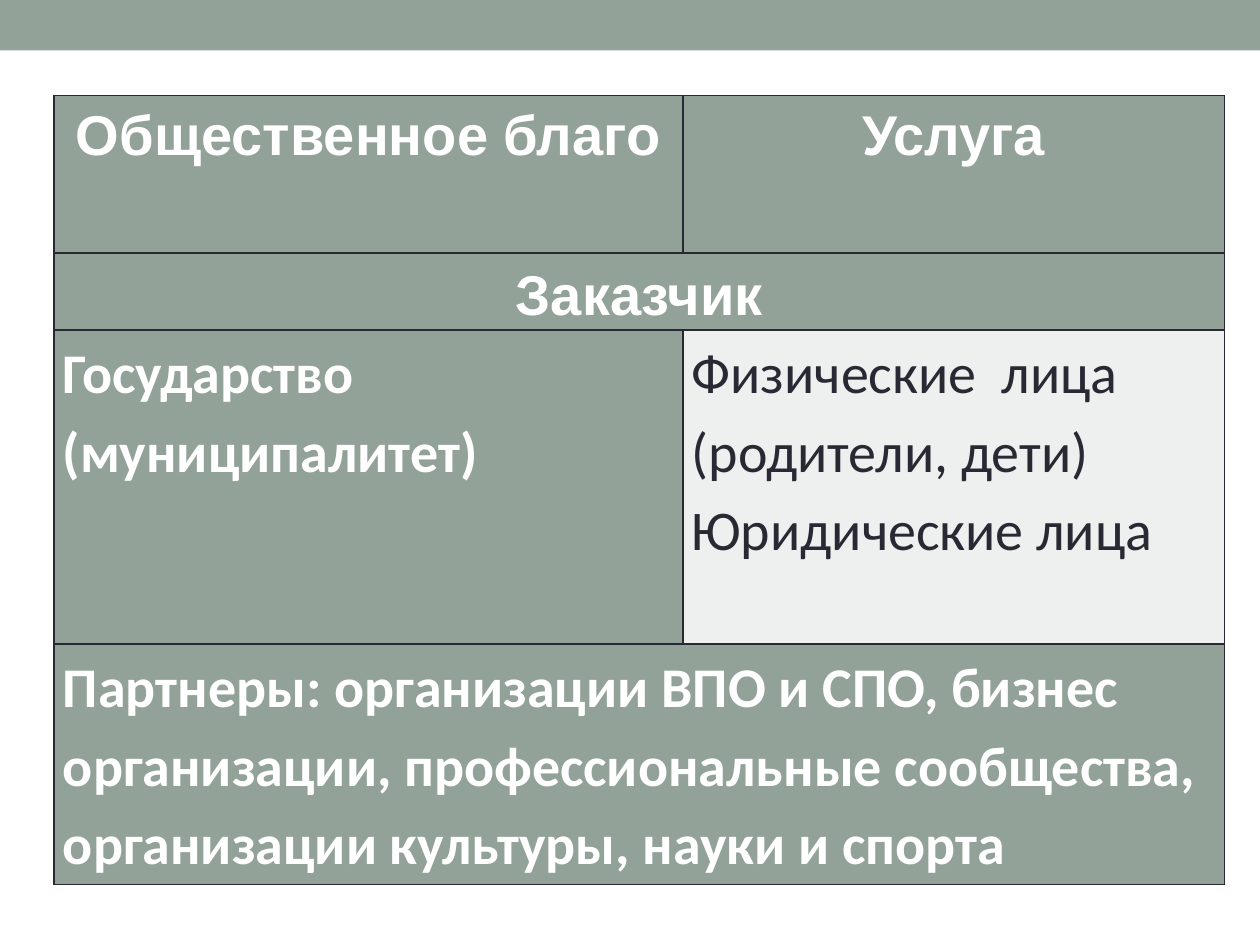
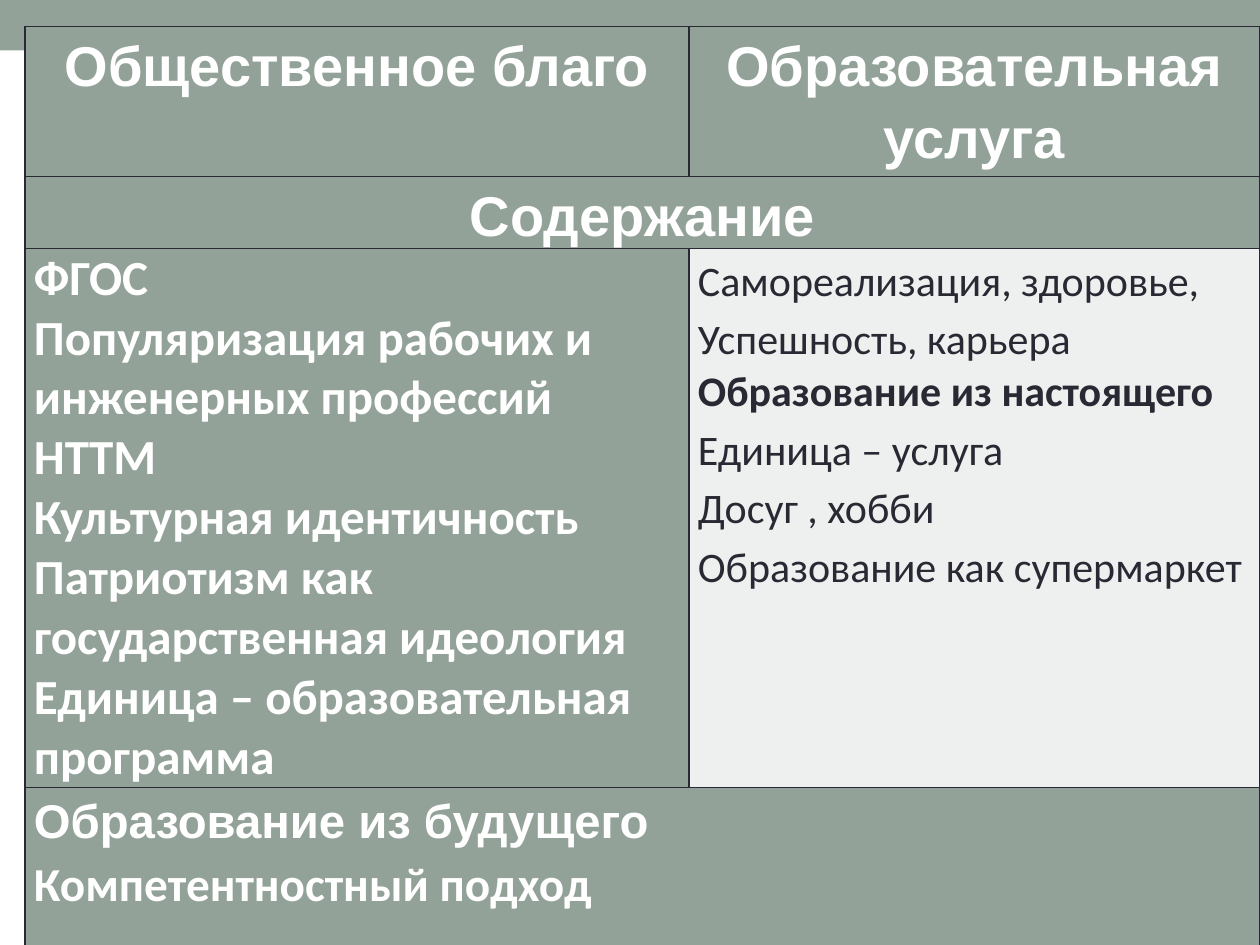
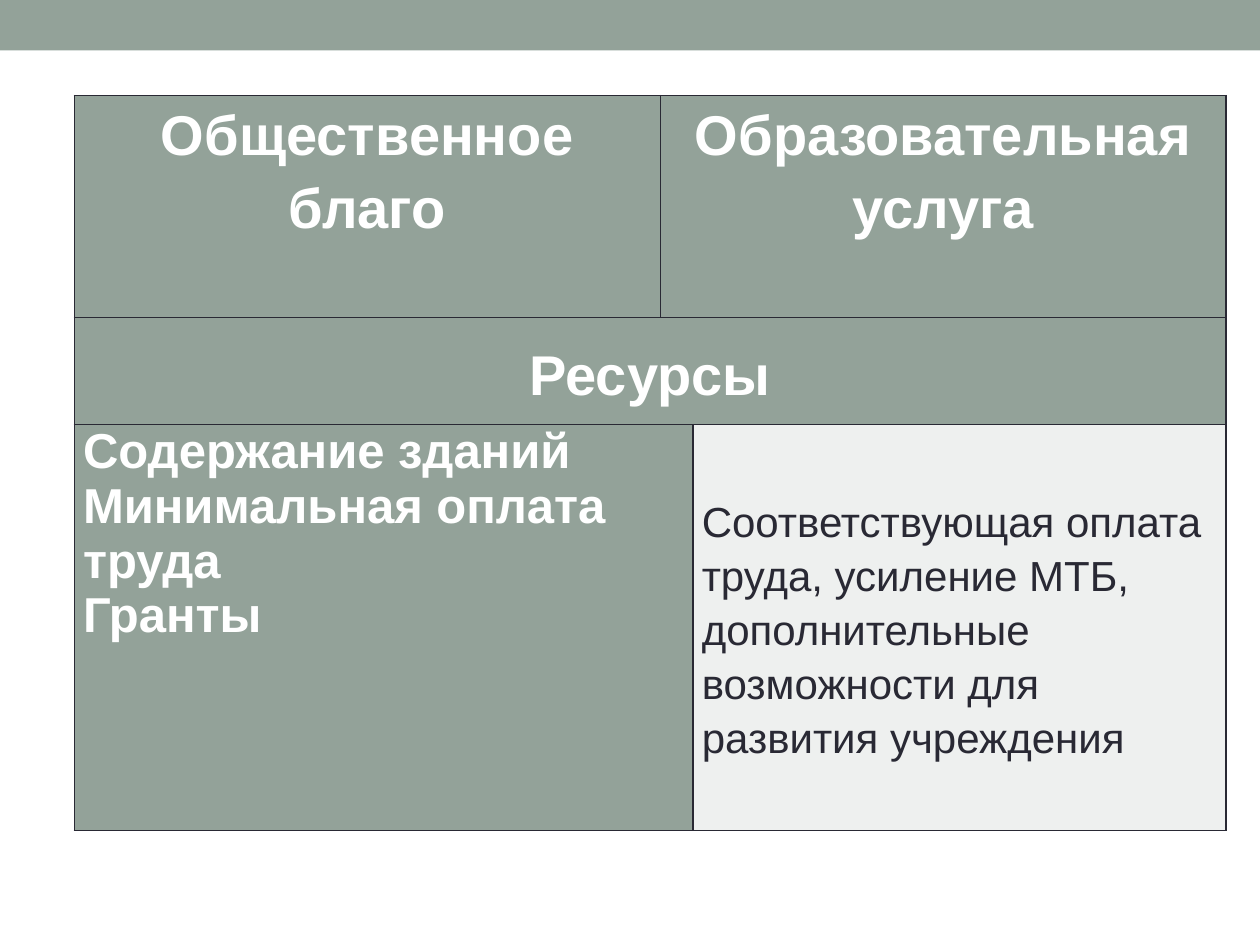
import pptx
import pptx.dml.color
import pptx.enum.shapes
import pptx.enum.text
import pptx.oxml
import pptx.oxml.ns
import pptx.util

Inches = pptx.util.Inches
Pt = pptx.util.Pt
Anchor = pptx.enum.text.MSO_ANCHOR
Align = pptx.enum.text.PP_ALIGN

COLORS = {"sage": "93A299", "mist": "EEF0EF", "ink": "292934", "white": "FFFFFF"}


def rgb(name):
    return pptx.dml.color.RGBColor.from_string(COLORS[name])


class Deck:
    def __init__(self):
        self.prs = pptx.Presentation()
        self.prs.slide_width = Inches(10)
        self.prs.slide_height = Inches(7.5)
        self.layout = self.prs.slide_layouts[6]
        self.slide = None

    def new_slide(self):
        self.slide = self.prs.slides.add_slide(self.layout)
        if len(self.prs.slides) == 1:
            self.shared_band()

    def shared_band(self):
        band = self.slide.shapes.add_shape(
            pptx.enum.shapes.MSO_SHAPE.RECTANGLE, 0, 0, Inches(10), Inches(0.4))
        band.shadow.inherit = False
        band.fill.solid()
        band.fill.fore_color.rgb = rgb("sage")
        band.line.fill.background()
        self.layout.shapes._spTree.append(band._element)

    def table(self, left, top, columns, rows):
        frame = self.slide.shapes.add_table(
            len(rows), len(columns), Inches(left), Inches(top),
            Inches(sum(columns)), Inches(sum(rows)))
        grid = frame.table
        grid.first_row = grid.horz_banding = False
        for column, width in zip(grid.columns, columns):
            column.width = Inches(width)
        for row, height in zip(grid.rows, rows):
            row.height = Inches(height)
        for cell in grid.iter_cells():
            cell.margin_left = cell.margin_right = Inches(0.07)
            cell.margin_top = cell.margin_bottom = 0
            cell.fill.solid()
            cell.fill.fore_color.rgb = rgb("sage")
            self.borders(cell)
        return grid

    def borders(self, cell):
        properties = cell._tc.get_or_add_tcPr()
        for position, side in enumerate(("lnL", "lnR", "lnT", "lnB")):
            properties.insert(position, pptx.oxml.parse_xml(
                f'<a:{side} {pptx.oxml.ns.nsdecls("a")} w="12700"><a:solidFill>'
                f'<a:srgbClr val="{COLORS["ink"]}"/></a:solidFill></a:{side}>'))

    def cell_text(self, cell, lines, size=32, font="Calibri", color="white", bold=True,
                  spacing=1.15, align=Align.LEFT, anchor=Anchor.TOP):
        cell.text_frame.text = "\n".join(lines)
        cell.vertical_anchor = anchor
        for paragraph in cell.text_frame.paragraphs:
            paragraph.alignment = align
            paragraph.line_spacing = spacing
            for run in paragraph.runs:
                run.font.size = Pt(size)
                run.font.name = font
                run.font.bold = bold
                run.font.color.rgb = rgb(color)

    def heading(self, cell, text, anchor=Anchor.TOP):
        self.cell_text(cell, [text], font="Arial", align=Align.CENTER, anchor=anchor)

    def headings(self, grid, good, service, topic):
        self.heading(grid.cell(0, 0), good)
        self.heading(grid.cell(0, 1), service)
        grid.cell(1, 0).merge(grid.cell(1, len(grid.columns) - 1))
        self.heading(grid.cell(1, 0), topic, Anchor.MIDDLE)

    def service_cell(self, cell, lines, **style):
        cell.fill.fore_color.rgb = rgb("mist")
        self.cell_text(cell, lines, color="ink", bold=False, **style)


def customer_slide(deck):
    deck.new_slide()
    grid = deck.table(0.43, 0.76, [4.99, 4.3], [1.25, 0.61, 2.49, 1.91])
    deck.headings(grid, "Общественное благо", "Услуга", "Заказчик")
    deck.cell_text(grid.cell(2, 0), ["Государство (муниципалитет)"])
    deck.service_cell(grid.cell(2, 1), [
        "Физические  лица (родители, дети)", "Юридические лица"])
    grid.cell(3, 0).merge(grid.cell(3, 1))
    deck.cell_text(grid.cell(3, 0), [
        "Партнеры: организации ВПО и СПО, бизнес организации, "
        "профессиональные сообщества, организации культуры, науки и спорта"])


def content_slide(deck):
    deck.new_slide()
    grid = deck.table(0.2, 0.21, [5.27, 4.53], [1.19, 0.57, 4.27, 1.88])
    deck.headings(grid, "Общественное благо", "Образовательная услуга", "Содержание")
    deck.cell_text(grid.cell(2, 0), [
        "ФГОС",
        "Популяризация рабочих и инженерных профессий НТТМ",
        "Культурная идентичность Патриотизм как государственная идеология",
        "Единица – образовательная программа"], size=28, spacing=1.0)
    service = grid.cell(2, 1)
    deck.service_cell(service, [
        "Самореализация, здоровье, Успешность, карьера",
        "Образование из настоящего",
        "Единица – услуга",
        "Досуг , хобби",
        "Образование как супермаркет"], size=24)
    present = service.text_frame.paragraphs[1]
    present.line_spacing = 1.0
    present.runs[0].font.bold = True
    grid.cell(3, 0).merge(grid.cell(3, 1))
    approach = grid.cell(3, 0)
    deck.cell_text(approach, ["Образование из будущего", "Компетентностный подход"], size=27)
    approach.text_frame.paragraphs[0].runs[0].font.name = "Arial"


def resources_slide(deck):
    deck.new_slide()
    grid = deck.table(0.59, 0.76, [4.65, 0.26, 4.23], [1.76, 0.85, 3.22])
    grid.cell(0, 1).merge(grid.cell(0, 2))
    deck.headings(grid, "Общественное благо", "Образовательная услуга", "Ресурсы")
    grid.cell(2, 0).merge(grid.cell(2, 1))
    deck.cell_text(grid.cell(2, 0), [
        "Содержание зданий Минимальная оплата труда", "Гранты"],
        size=28, font="Arial", spacing=1.0)
    deck.service_cell(grid.cell(2, 2), [
        "Соответствующая оплата труда, усиление МТБ, дополнительные "
        "возможности для развития учреждения"],
        size=24, font="Arial", anchor=Anchor.MIDDLE)


def main():
    deck = Deck()
    customer_slide(deck)
    content_slide(deck)
    resources_slide(deck)
    deck.prs.save("out.pptx")


if __name__ == "__main__":
    main()
